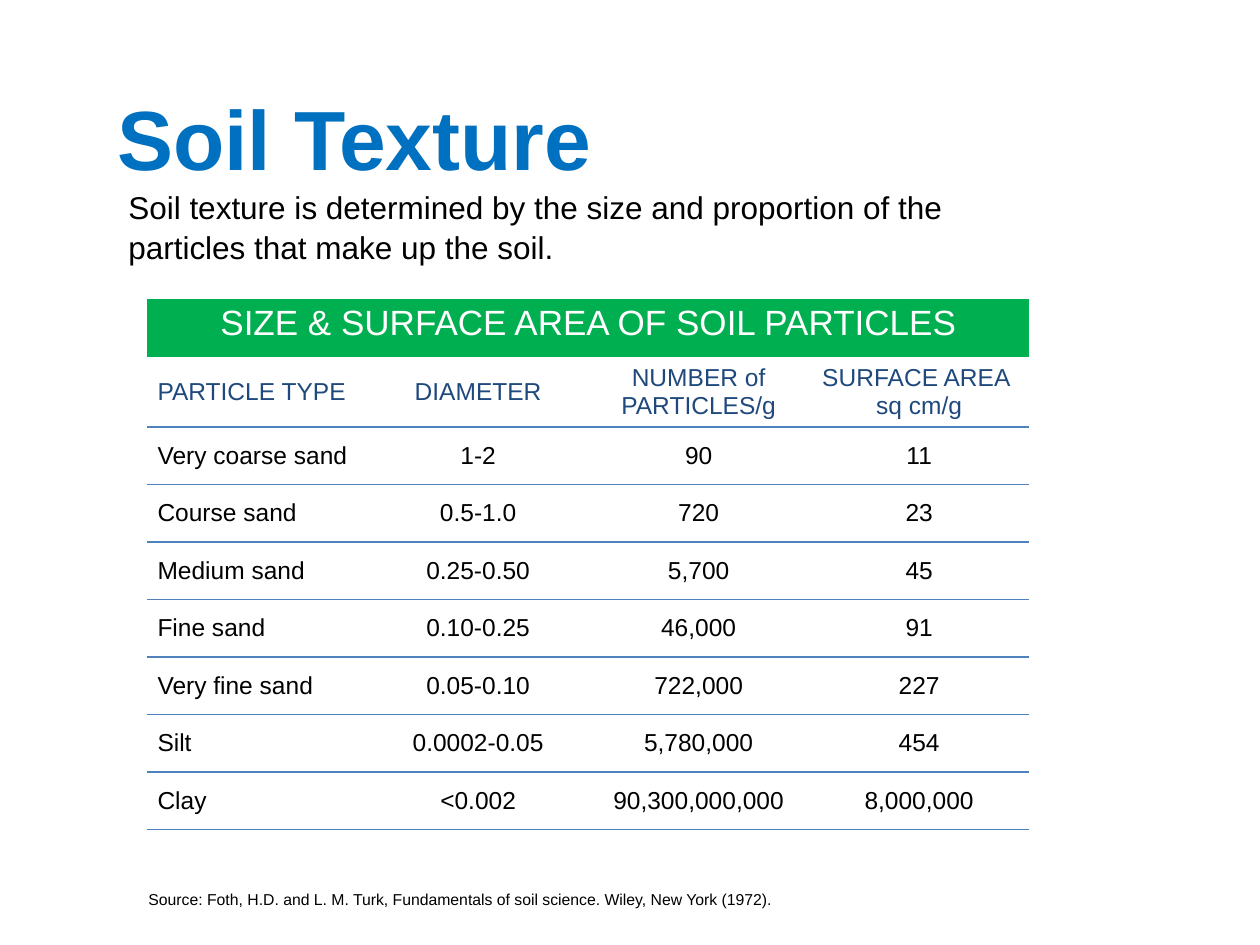
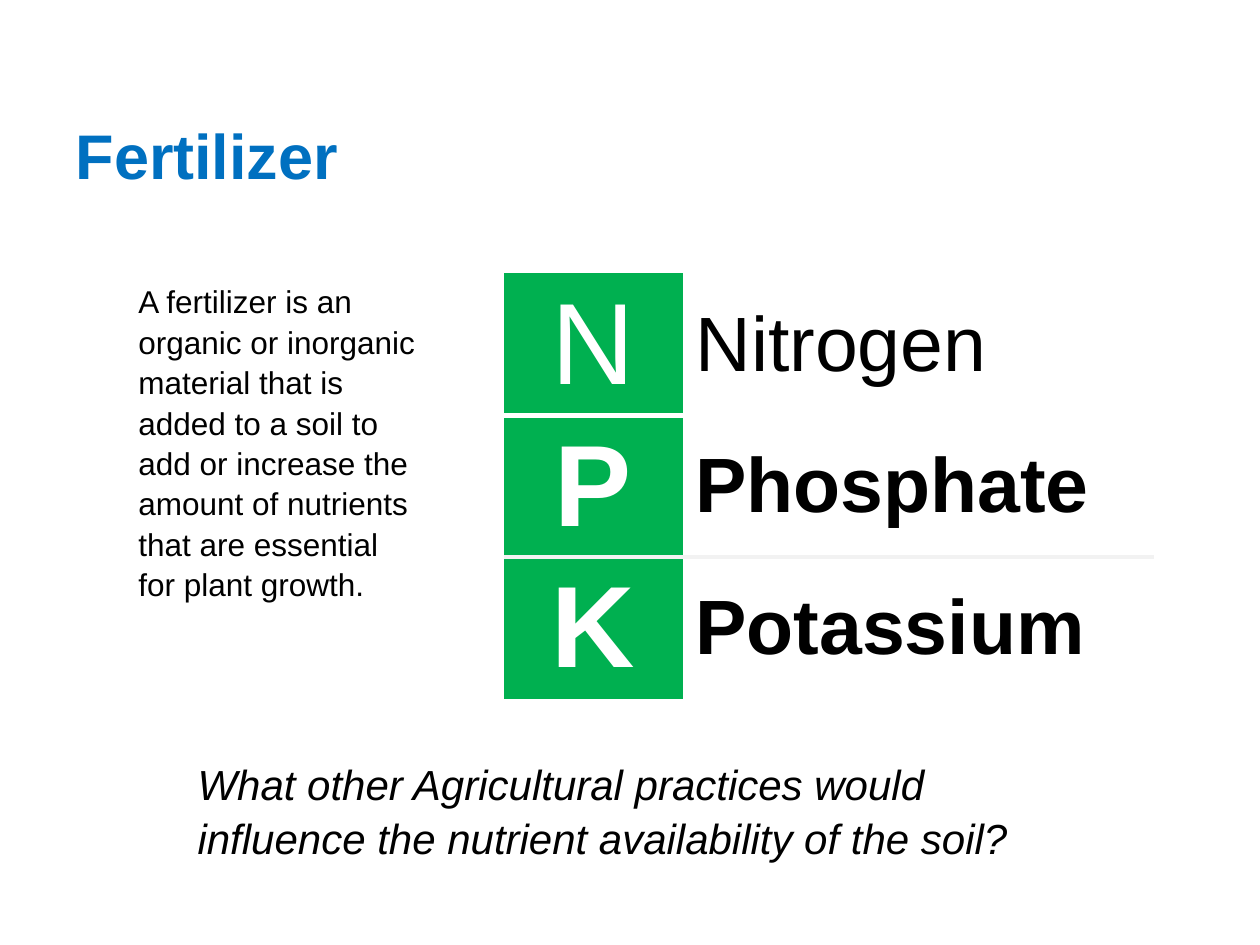
from lxml import etree
from pptx import Presentation
from pptx.dml.color import RGBColor
from pptx.enum.text import MSO_ANCHOR, MSO_AUTO_SIZE, PP_ALIGN
from pptx.oxml.ns import qn
from pptx.util import Inches, Pt

LEFT, CENTER = PP_ALIGN.LEFT, PP_ALIGN.CENTER
TOP, MIDDLE = MSO_ANCHOR.TOP, MSO_ANCHOR.MIDDLE
NO_AUTOFIT = MSO_AUTO_SIZE.NONE

COLORS = {
    "title": "0070C0", "text": "000000", "white": "FFFFFF", "green": "00B050",
    "navy": "1F497D", "rule": "4F81BD", "pale": "F2F2F2",
}
FONT = "Arial"
LINE_SPACING = 1.07
TITLE_ONLY = 5
PLAIN_TABLE_STYLE = "{2D5ABB26-0587-4C30-8999-92F81FD0307C}"

SOIL_TITLE = "Soil Texture"
SOIL_INTRO = ("Soil texture is determined by the size and proportion of the "
              "particles that make up the soil.")
PARTICLE_HEADING = "SIZE & SURFACE AREA OF SOIL PARTICLES"
PARTICLE_ROWS = [
    ("PARTICLE TYPE", "DIAMETER", "NUMBER of PARTICLES/g", "SURFACE AREA \nsq cm/g"),
    ("Very coarse sand", "1-2", "90", "11"),
    ("Course sand", "0.5-1.0", "720", "23"),
    ("Medium sand", "0.25-0.50", "5,700", "45"),
    ("Fine sand", "0.10-0.25", "46,000", "91"),
    ("Very fine sand", "0.05-0.10", "722,000", "227"),
    ("Silt", "0.0002-0.05", "5,780,000", "454"),
    ("Clay", "<0.002", "90,300,000,000", "8,000,000"),
]
SOIL_SOURCE = ("Source: Foth, H.D. and L. M. Turk, Fundamentals of soil science. "
               "Wiley, New York (1972).")

FERTILIZER_TITLE = "Fertilizer"
FERTILIZER_INTRO = ("A fertilizer is an organic or inorganic material that is added to a "
                    "soil to add or increase the amount of nutrients that are essential "
                    "for plant growth.")
NUTRIENTS = [("N", "Nitrogen"), ("P", "Phosphate"), ("K", "Potassium")]
QUESTION = ("What other Agricultural practices would influence the nutrient "
            "availability of the soil?")


def write_text(frame, text, size, color="text", align=LEFT, spacing=None, **styles):
    para = frame.paragraphs[0]
    para.text = text
    para.alignment = align
    if spacing:
        para.line_spacing = spacing
    for span in para.runs:
        span.font.color.rgb = RGBColor.from_string(COLORS[color])
        for name, value in {"name": FONT, "size": Pt(size), **styles}.items():
            setattr(span.font, name, value)


def fill_box(box, text, size, **styles):
    frame = box.text_frame
    frame.word_wrap = True
    frame.auto_size = NO_AUTOFIT
    frame.vertical_anchor = TOP
    write_text(frame, text, size, spacing=LINE_SPACING, **styles)


def add_titled_slide(deck, title, size, place):
    page = deck.slides.add_slide(deck.slide_layouts[TITLE_ONLY])
    box = page.shapes.title
    box.left, box.top, box.width, box.height = map(Inches, place)
    fill_box(box, title, size, color="title", bold=True)
    return page


def add_text(page, text, size, place, **styles):
    fill_box(page.shapes.add_textbox(*map(Inches, place)), text, size, **styles)


def add_plain_table(page, left, top, widths, heights):
    frame = page.shapes.add_table(len(heights), len(widths), Inches(left), Inches(top),
                                  Inches(sum(widths)), Inches(sum(heights)))
    table = frame.table
    table.first_row = table.horz_banding = False
    frame.element.find(".//" + qn("a:tableStyleId")).text = PLAIN_TABLE_STYLE
    for column, width in zip(table.columns, widths):
        column.width = Inches(width)
    for row, height in zip(table.rows, heights):
        row.height = Inches(height)
    return table


def add_rules(table, rules):
    """Draw horizontal lines; each key is the number of rows above the line."""
    for index, row in enumerate(table.rows):
        for cell in row.cells:
            for tag, boundary in (("a:lnT", index), ("a:lnB", index + 1)):
                if boundary not in rules:
                    continue
                color, width = rules[boundary]
                line = etree.SubElement(cell._tc.get_or_add_tcPr(), qn(tag), w=str(Pt(width)))
                fill = etree.SubElement(line, qn("a:solidFill"))
                etree.SubElement(fill, qn("a:srgbClr"), val=COLORS[color])


def fill_cell(cell, text, size, fill="white", anchor=MIDDLE, margins=(0.1, 0.05), **styles):
    side, edge = map(Inches, margins)
    cell.margin_left = cell.margin_right = side
    cell.margin_top = cell.margin_bottom = edge
    cell.vertical_anchor = anchor
    cell.fill.solid()
    cell.fill.fore_color.rgb = RGBColor.from_string(COLORS[fill])
    write_text(cell.text_frame, text, size, **styles)


def build_soil_slide(deck):
    page = add_titled_slide(deck, SOIL_TITLE, 48, (0.83, 0.58, 5.67, 0.91))
    add_text(page, SOIL_INTRO, 18, (0.92, 1.42, 6.76, 0.71))

    last = len(PARTICLE_ROWS) + 1
    heights = [0.46, 0.56] + [0.456] * (last - 2)
    table = add_plain_table(page, 1.17, 2.37, [1.75] * 4, heights)
    rules = {boundary: ("rule", 1) for boundary in range(2, last)}
    add_rules(table, {**rules, last: ("rule", 0.75)})

    margins = (0.08, 0.04)
    heading = table.cell(0, 0)
    heading.merge(table.cell(0, 3))
    fill_cell(heading, PARTICLE_HEADING, 20, fill="green", anchor=TOP, margins=margins,
              color="white", align=CENTER)
    for r, values in enumerate(PARTICLE_ROWS, start=1):
        for c, value in enumerate(values):
            fill_cell(table.cell(r, c), value, 14, margins=margins,
                      color="navy" if r == 1 else "text", align=CENTER if c else LEFT)

    add_text(page, SOIL_SOURCE, 9, (1.08, 7, 6.75, 0.25))


def build_fertilizer_slide(deck):
    page = add_titled_slide(deck, FERTILIZER_TITLE, 36, (0.5, 0.83, 8.67, 0.71))
    add_text(page, FERTILIZER_INTRO, 18, (1, 2.17, 2.42, 2.52))

    table = add_plain_table(page, 4, 2.17, [1.42, 3.74], [1.12] * len(NUTRIENTS))
    add_rules(table, {1: ("white", 3), 2: ("pale", 2.25)})
    for r, (symbol, nutrient) in enumerate(NUTRIENTS):
        bold = r > 0
        fill_cell(table.cell(r, 0), symbol, 66, fill="green", anchor=TOP,
                  color="white", align=CENTER, bold=bold)
        fill_cell(table.cell(r, 1), nutrient, 44, bold=bold)

    add_text(page, QUESTION, 24, (1.47, 5.94, 6.74, 0.91), italic=True)


def main():
    deck = Presentation()
    deck.slide_width, deck.slide_height = Inches(10), Inches(7.5)
    build_soil_slide(deck)
    build_fertilizer_slide(deck)
    deck.save("out.pptx")


if __name__ == "__main__":
    main()
